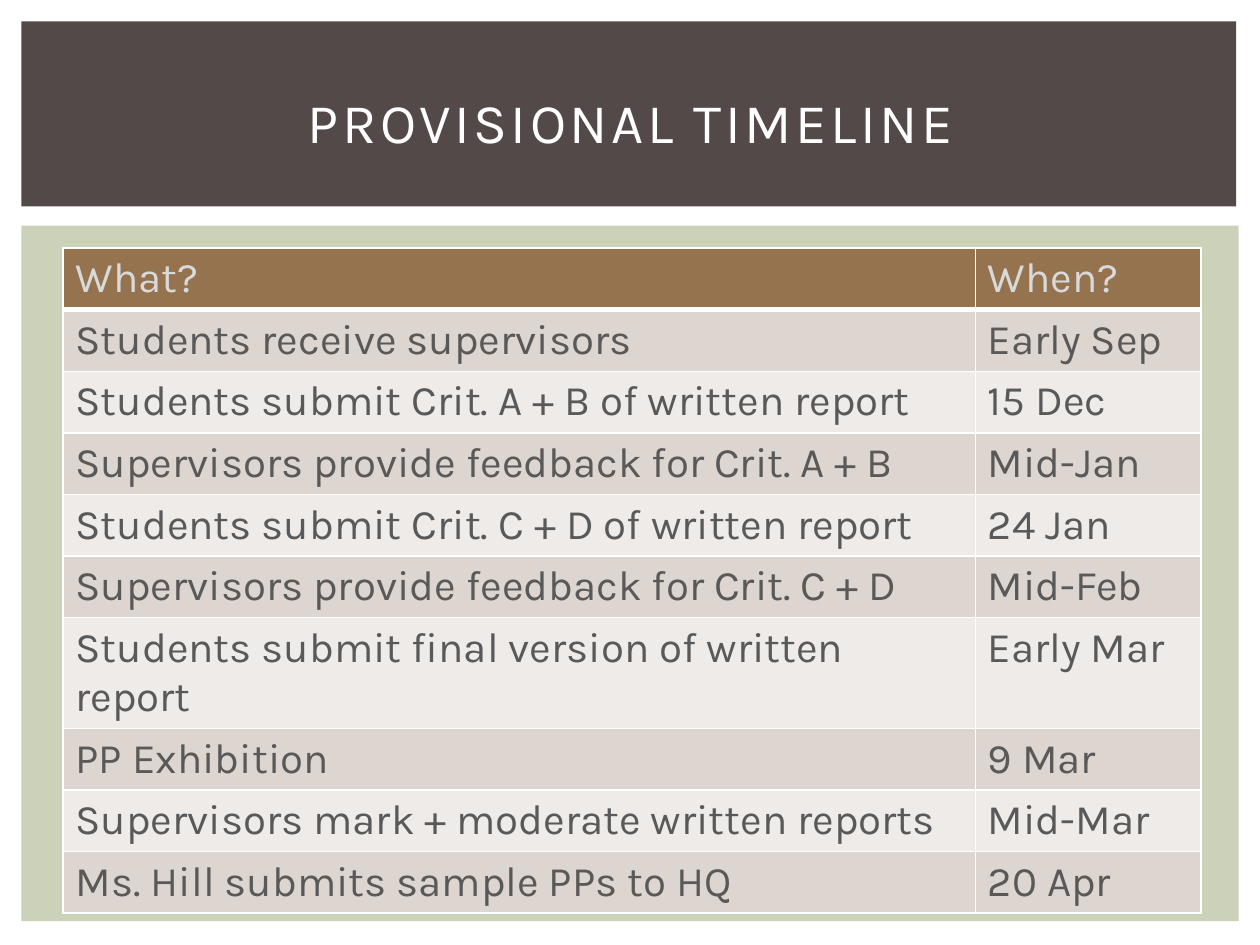
from pptx import Presentation
from pptx.enum import shapes as sh, text as tx
from pptx.dml.color import RGBColor
from pptx.oxml import parse_xml
from pptx.oxml.ns import nsdecls
from pptx.util import Cm, Pt

HUES = {
    "sage": "CCD1B9", "dark": "534949", "white": "FFFFFF", "brown": "94734E",
    "pale": "D9D9D9", "ink": "595959", "odd": "DCD5D0", "even": "EEEBE9",
}
FONT = "Karla"
ROWS = [
    ("What?", "When?"),
    ("Students receive supervisors", "Early Sep"),
    ("Students submit Crit. A + B of written report", "15 Dec"),
    ("Supervisors provide feedback for Crit. A + B", "Mid-Jan"),
    ("Students submit Crit. C + D of written report", "24 Jan"),
    ("Supervisors provide feedback for Crit. C + D", "Mid-Feb"),
    ("Students submit final version of written report", "Early Mar"),
    ("PP Exhibition", "9 Mar"),
    ("Supervisors mark + moderate written reports", "Mid-Mar"),
    ("Ms. Hill submits sample PPs to HQ", "20 Apr"),
]


def hue(name):
    return RGBColor.from_string(HUES[name])


def style(para, size, name):
    para.font.name = FONT
    para.font.size = Pt(size)
    para.font.color.rgb = hue(name)


def panel(slide, box, name):
    rect = slide.shapes.add_shape(sh.MSO_SHAPE.RECTANGLE, *map(Cm, box))
    rect.shadow.inherit = False
    rect.fill.solid()
    rect.fill.fore_color.rgb = hue(name)
    rect.line.fill.background()


def header(slide, box, title):
    left, top, wide, high = box
    panel(slide, box, "dark")
    # Title, set inside the band
    area = (left + 0.64, top + 0.56, wide - 1.2, high - 0.81)
    frame = slide.shapes.add_textbox(*map(Cm, area)).text_frame
    frame.word_wrap = True
    frame.vertical_anchor = tx.MSO_ANCHOR.MIDDLE
    para = frame.paragraphs[0]
    para.alignment = tx.PP_ALIGN.CENTER
    run = para.add_run()
    run.text = title
    style(para, 32, "white")
    run._r.get_or_add_rPr().set("spc", "200")


def edge(cell, base):
    """Draw white borders; the fill must be set afterwards."""
    props = cell._tc.get_or_add_tcPr()
    for side, width in (("L", 1), ("R", 1), ("T", 1), ("B", base)):
        props.append(parse_xml(
            f'<a:ln{side} {nsdecls("a")} w="{Pt(width)}"><a:solidFill>'
            f'<a:srgbClr val="{HUES["white"]}"/></a:solidFill></a:ln{side}>'))


def body(slide, box, rows):
    left, top, wide, high = box
    panel(slide, box, "sage")
    # Timeline table; rows grow to fit their text
    cols, step = (18.39, 4.55), 1.04
    table = slide.shapes.add_table(
        len(rows), len(cols), Cm(left + 0.84), Cm(top + 0.45),
        Cm(sum(cols)), Cm(step * len(rows))).table
    for col, width in zip(table.columns, cols):
        col.width = Cm(width)
    for i, row in enumerate(rows):
        table.rows[i].height = Cm(step)
        fill = "brown" if i == 0 else "odd" if i % 2 else "even"
        for j, words in enumerate(row):
            cell = table.cell(i, j)
            edge(cell, 1 if i else 3)
            cell.fill.solid()
            cell.fill.fore_color.rgb = hue(fill)
            cell.text = words
            para = cell.text_frame.paragraphs[0]
            style(para, 24, "ink" if i else "pale")
            para.font.bold = False


def main():
    deck = Presentation()
    deck.slide_width, deck.slide_height = Cm(25.4), Cm(19.05)
    slide = deck.slides.add_slide(deck.slide_layouts[6])
    body(slide, (0.43, 4.55, 24.54, 14.02), ROWS)
    header(slide, (0.43, 0.43, 24.49, 3.73), "PROVISIONAL TIMELINE")
    deck.save("out.pptx")


if __name__ == "__main__":
    main()
